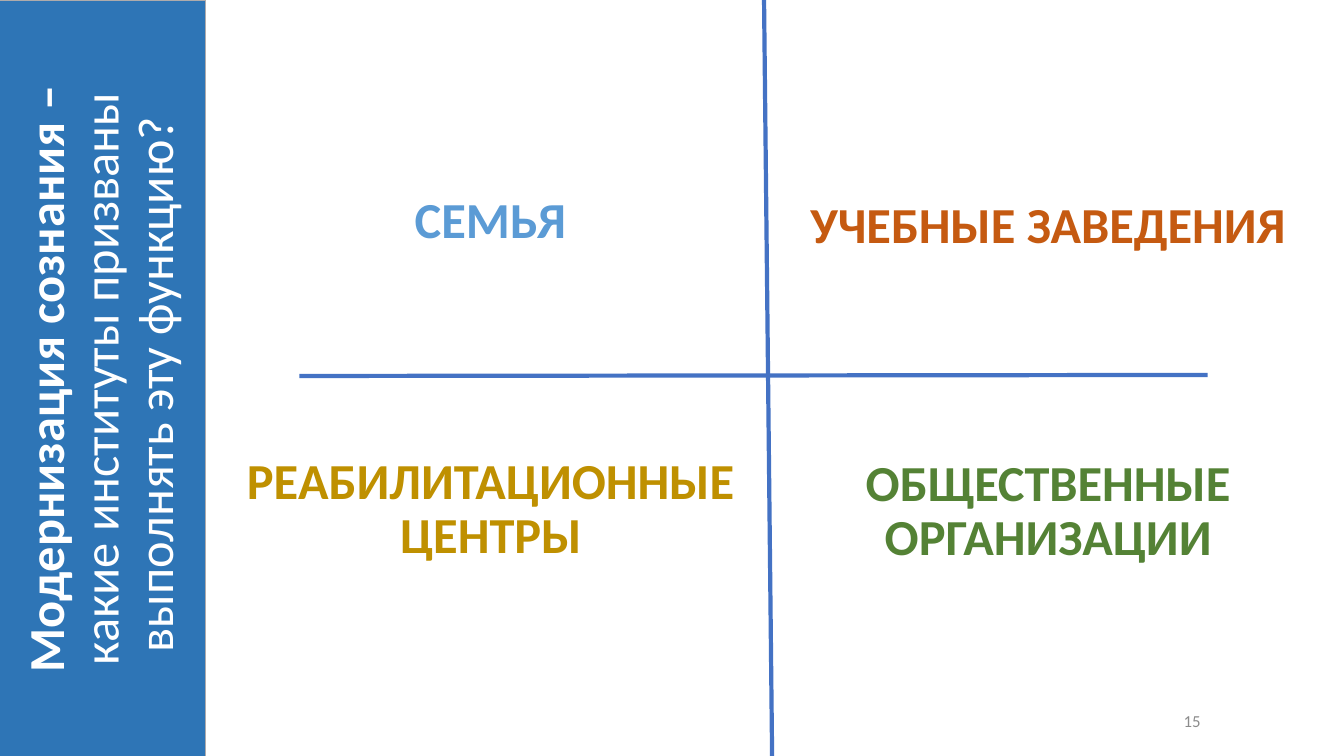
from dataclasses import dataclass

from pptx import Presentation
from pptx.dml.color import RGBColor
from pptx.enum.shapes import MSO_CONNECTOR, MSO_SHAPE
from pptx.enum.text import MSO_ANCHOR, MSO_AUTO_SIZE, PP_ALIGN
from pptx.oxml.ns import qn
from pptx.slide import Slide
from pptx.text.text import TextFrame
from pptx.util import Pt

WHITE = RGBColor(0xFF, 0xFF, 0xFF)
GREY = RGBColor(0x8C, 0x8C, 0x8C)
BAND_BLUE = RGBColor(0x2E, 0x75, 0xB6)
BAND_EDGE = RGBColor(0xAF, 0xAB, 0xAB)
AXIS_BLUE = RGBColor(0x44, 0x72, 0xC4)
GREEN = RGBColor(0x54, 0x82, 0x35)
GOLD = RGBColor(0xBF, 0x90, 0x00)
SKY = RGBColor(0x5B, 0x9B, 0xD5)
ORANGE = RGBColor(0xC5, 0x5A, 0x11)
FONT = "Calibri"


@dataclass(frozen=True)
class Label:
    text: str
    left: float
    top: float
    width: float
    height: float
    color: RGBColor
    size: float = 36
    bold: bool = True
    align: PP_ALIGN = PP_ALIGN.CENTER
    anchor: MSO_ANCHOR = MSO_ANCHOR.TOP
    line_spacing: float = 0.9


@dataclass(frozen=True)
class Axis:
    x1: float
    y1: float
    x2: float
    y2: float


LABELS = (
    Label("15", 648.72, 500.4, 216, 28.8, GREY, 12, False,
          PP_ALIGN.RIGHT, MSO_ANCHOR.MIDDLE, 1.0),
    Label("ОБЩЕСТВЕННЫЕ ОРГАНИЗАЦИИ", 581.76, 323.28, 334.08, 115.92, GREEN),
    Label("РЕАБИЛИТАЦИОННЫЕ ЦЕНТРЫ", 149.76, 321.84, 401.76, 95.04, GOLD),
    Label("СЕМЬЯ", 174.24, 136.08, 352.08, 102.96, SKY),
    Label("УЧЕБНЫЕ ЗАВЕДЕНИЯ", 568.8, 138.96, 360, 78.48, ORANGE),
)
AXES = (
    Axis(545.76, 0, 551.52, 540),
    Axis(213.84, 268.56, 862.56, 267.84),
)
TITLE_PARTS = (
    ("Модернизация сознания – ", True),
    ("какие институты призваны выполнять эту функцию? ", False),
)


def prepare_frame(frame: TextFrame, anchor: MSO_ANCHOR) -> None:
    frame.word_wrap = True
    frame.auto_size = MSO_AUTO_SIZE.NONE
    frame.vertical_anchor = anchor


def draw_label(slide: Slide, label: Label) -> None:
    box = slide.shapes.add_textbox(
        Pt(label.left), Pt(label.top), Pt(label.width), Pt(label.height))
    prepare_frame(box.text_frame, label.anchor)
    paragraph = box.text_frame.paragraphs[0]
    paragraph.text = label.text
    paragraph.alignment = label.align
    paragraph.line_spacing = label.line_spacing
    paragraph.font.name = FONT
    paragraph.font.size = Pt(label.size)
    paragraph.font.bold = label.bold
    paragraph.font.color.rgb = label.color


def draw_axis(slide: Slide, axis: Axis) -> None:
    connector = slide.shapes.add_connector(
        MSO_CONNECTOR.STRAIGHT,
        Pt(axis.x1), Pt(axis.y1), Pt(axis.x2), Pt(axis.y2))
    connector.line.color.rgb = AXIS_BLUE
    connector.line.width = Pt(3)
    properties = connector._element.spPr
    properties.append(properties.makeelement(qn("a:effectLst"), {}))


def draw_band(slide: Slide) -> None:
    band = slide.shapes.add_shape(
        MSO_SHAPE.RECTANGLE, Pt(-1.44), Pt(0), Pt(148.32), Pt(540.72))
    band.shadow.inherit = False
    band.fill.solid()
    band.fill.fore_color.rgb = BAND_BLUE
    band.line.color.rgb = BAND_EDGE
    band.line.width = Pt(1)


def draw_title(slide: Slide) -> None:
    title = slide.shapes.title
    title.left, title.top = Pt(-190.08), Pt(196.56)
    title.width, title.height = Pt(526.32), Pt(148.32)
    title.rotation = 270
    prepare_frame(title.text_frame, MSO_ANCHOR.MIDDLE)
    paragraph = title.text_frame.paragraphs[0]
    paragraph.alignment = PP_ALIGN.CENTER
    paragraph.line_spacing = 0.9
    paragraph.font.name = FONT
    paragraph.font.size = Pt(36)
    paragraph.font.color.rgb = WHITE
    for text, bold in TITLE_PARTS:
        run = paragraph.add_run()
        run.text = text
        run.font.bold = bold
    slide.shapes._spTree.append(title._element)


def main() -> None:
    presentation = Presentation()
    presentation.slide_width = Pt(960)
    presentation.slide_height = Pt(540)
    slide = presentation.slides.add_slide(presentation.slide_layouts[5])
    for label in LABELS:
        draw_label(slide, label)
    for axis in AXES:
        draw_axis(slide, axis)
    draw_band(slide)
    draw_title(slide)
    presentation.save("out.pptx")


if __name__ == "__main__":
    main()
